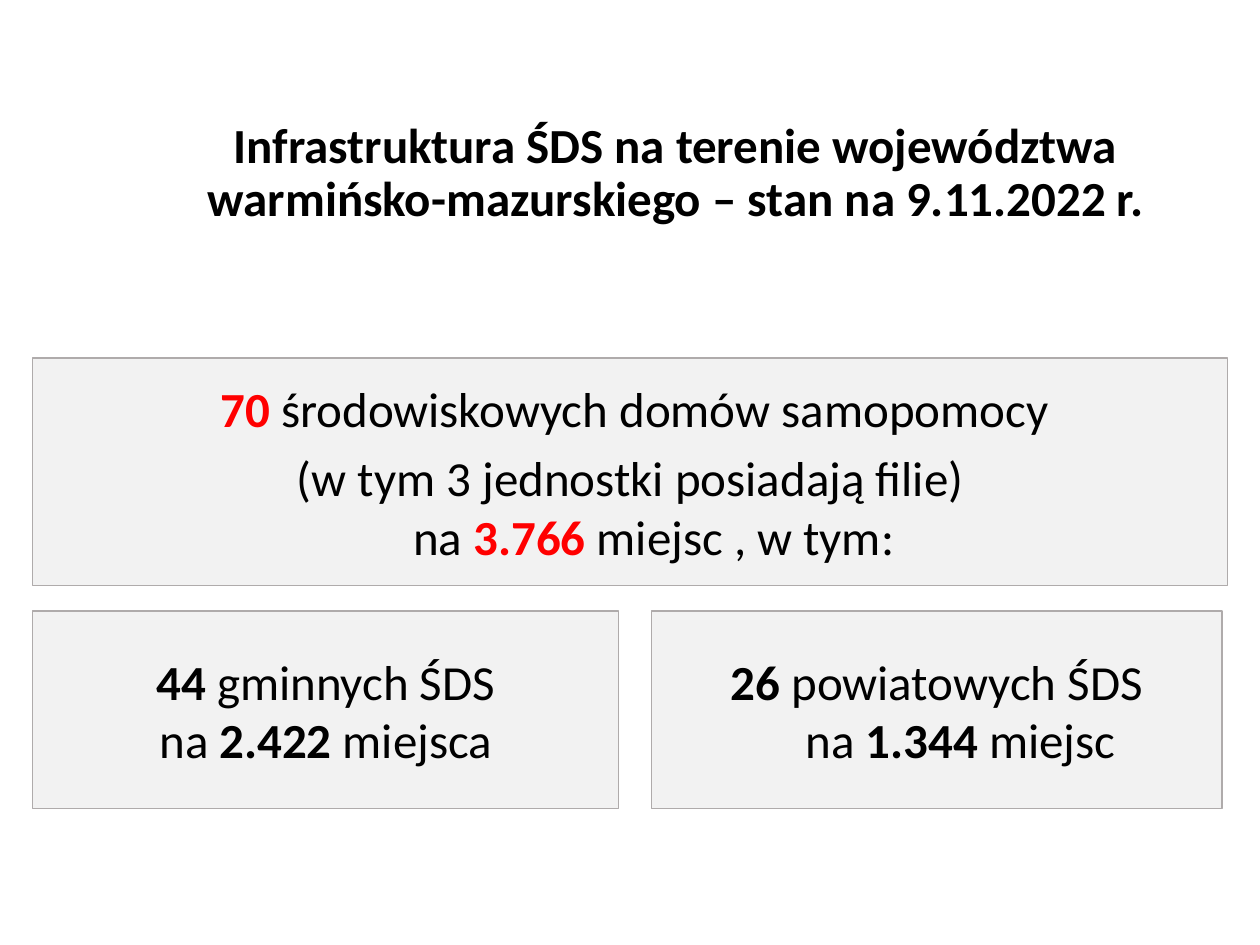
import pptx
import pptx.util
import pptx.dml.color
import pptx.enum.shapes
import pptx.enum.text

Pt = pptx.util.Pt

THEME = {
    "font": "Calibri", "size": 28,
    "text": "000000", "accent": "FF0000",
    "fill": "F2F2F2", "line": "AFABAB", "line_width": 0.75,
}

# Content: each paragraph is (margin, first-line indent, space before, lines);
# each line is a list of (text, bold, colour) runs.
PLAIN, BOLD, RED = (False, "text"), (True, "text"), (True, "accent")
HANGING = (27, -27, 5.6)
TITLE = [
    (0, 0, 0, [[("Infrastruktura ŚDS na terenie województwa "
                 "warmińsko-mazurskiego – stan na 9.11.2022 r.", BOLD)]]),
]
TOTAL = [
    (27, -22, 5.6, [[("70 ", RED), ("środowiskowych domów samopomocy", PLAIN)]]),
    (*HANGING, [
        [("(w tym 3 jednostki posiadają filie)", PLAIN)],
        [("na ", PLAIN), ("3.766 ", RED), ("miejsc , w tym:", PLAIN)],
    ]),
]
COUNTY = [
    (*HANGING, [
        [("26", BOLD), (" powiatowych ŚDS", PLAIN)],
        [("na ", PLAIN), ("1.344", BOLD), (" miejsc", PLAIN)],
    ]),
]
MUNICIPAL = [
    (0, 0, 0, [
        [("44 ", BOLD), ("gminnych ŚDS", PLAIN)],
        [("na ", PLAIN), ("2.422", BOLD), (" miejsca", PLAIN)],
    ]),
]

# Layout
TITLE_AREA = (99.4, 49, 573.1, 100.8)
LEFT, TOTAL_TOP, ROW_TOP = 18.7, 204.5, 349.2
TOTAL_SIZE = (682.6, 130.3)
ROW_HEIGHT, MUNICIPAL_WIDTH, COUNTY_WIDTH, GAP = 113, 334.8, 326.2, 18.7
PANELS = [
    (TOTAL, (LEFT, TOTAL_TOP, *TOTAL_SIZE)),
    (COUNTY, (LEFT + MUNICIPAL_WIDTH + GAP, ROW_TOP, COUNTY_WIDTH, ROW_HEIGHT)),
    (MUNICIPAL, (LEFT, ROW_TOP, MUNICIPAL_WIDTH, ROW_HEIGHT)),
]


def color(name):
    return pptx.dml.color.RGBColor.from_string(THEME[name])


def write(box, paragraphs, line_spacing=1.0):
    frame = box.text_frame
    frame.word_wrap = True
    frame.vertical_anchor = pptx.enum.text.MSO_ANCHOR.MIDDLE
    for index, (margin, indent, before, lines) in enumerate(paragraphs):
        para = frame.add_paragraph() if index else frame.paragraphs[0]
        para.alignment = pptx.enum.text.PP_ALIGN.CENTER
        para.line_spacing = line_spacing
        para.space_before = Pt(before)
        properties = para._p.get_or_add_pPr()
        properties.set("marL", str(Pt(margin)))
        properties.set("indent", str(Pt(indent)))
        for number, line in enumerate(lines):
            if number:
                para.add_line_break()
            for text, (bold, color_name) in line:
                span = para.add_run()
                span.text = text
                span.font.name = THEME["font"]
                span.font.size = Pt(THEME["size"])
                span.font.bold = bold
                span.font.color.rgb = color(color_name)


def add_panel(page, paragraphs, area):
    box = page.shapes.add_shape(
        pptx.enum.shapes.MSO_SHAPE.RECTANGLE, *map(Pt, area))
    box.shadow.inherit = False
    box.fill.solid()
    box.fill.fore_color.rgb = color("fill")
    box.line.color.rgb = color("line")
    box.line.width = Pt(THEME["line_width"])
    write(box, paragraphs)


def main():
    deck = pptx.Presentation()
    deck.slide_width, deck.slide_height = Pt(720), Pt(540)
    page = deck.slides.add_slide(deck.slide_layouts[6])

    # Title
    write(page.shapes.add_textbox(*map(Pt, TITLE_AREA)), TITLE, 0.9)

    # Total above, split by type below
    for paragraphs, area in PANELS:
        add_panel(page, paragraphs, area)

    deck.save("out.pptx")


if __name__ == "__main__":
    main()
